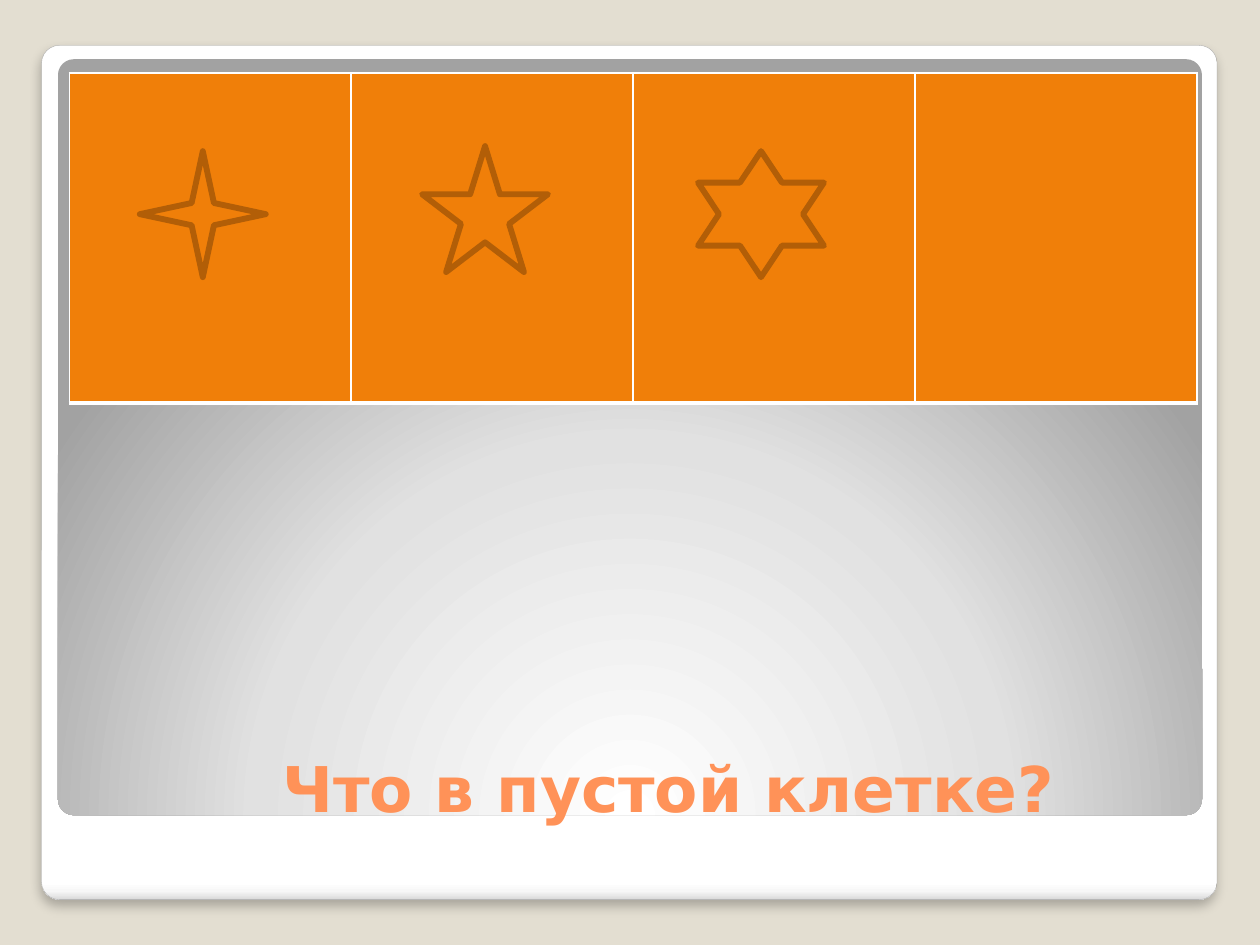
"""Build a puzzle slide: a row of stars with one cell left empty."""
from dataclasses import dataclass

from lxml import etree
from pptx import Presentation
from pptx import util as u
from pptx.dml.color import RGBColor
from pptx.enum import shapes, text
from pptx.oxml import ns

KIND = shapes.MSO_SHAPE


@dataclass(frozen=True)
class Theme:
    """Colours, type and line sizes of the slide."""
    backdrop: str = "E3DED1"
    frame_edge: str = "A4A4A4"
    cell: str = "F07F09"
    star_edge: str = "B25E07"
    border: str = "FFFFFF"
    title: str = "FF9258"
    shadow: str = "000000"
    frame_stops: tuple = ((0, "FFFFFF"), (98, "FFFFFF"), (99, "F7F7F7"), (100, "DADADA"))
    panel_stops: tuple = ((0, "FFFFFF"), (55, "E1E1E1"), (100, "A2A2A2"))
    font: str = "DejaVu Sans"
    title_size: float = 36
    star_line: float = 3.35
    frame_line: float = 0.16


def add_node(parent, tag, **values):
    """Append a DrawingML element and return it."""
    node = etree.SubElement(parent, ns.qn("a:" + tag))
    for name, value in values.items():
        node.set(name, str(value))
    return node


def add_color(parent, color, **changes):
    """Append an RGB colour with optional changes such as alpha."""
    node = add_node(parent, "srgbClr", val=color)
    for name, value in changes.items():
        add_node(node, name, val=value)


def apply_format(target, values):
    """Set each named attribute on the target."""
    for name, value in values.items():
        setattr(target, name, value)


class SlideBuilder:
    """Hold the theme and the current page, measured on a 100 by 75 grid."""

    def __init__(self, theme, columns=100, rows=75):
        self.theme = theme
        self.deck = Presentation()
        apply_format(self.deck, {"slide_width": u.Inches(10), "slide_height": u.Inches(7.5)})
        self.column = self.deck.slide_width / columns
        self.row = self.deck.slide_height / rows
        self.page = self.deck.slides.add_slide(self.deck.slide_layouts[5])
        fill = self.page.background.fill
        fill.solid()
        fill.fore_color.rgb = RGBColor.from_string(theme.backdrop)

    def place(self, left, top, width, height):
        """Turn grid units into slide lengths."""
        return (round(left * self.column), round(top * self.row),
                round(width * self.column), round(height * self.row))

    def shape(self, kind, area, fill=None, edge=None, weight=0):
        """Add a preset shape with a plain fill and outline."""
        item = self.page.shapes.add_shape(kind, *self.place(*area))
        item.shadow.inherit = False
        if fill:
            item.fill.solid()
            item.fill.fore_color.rgb = RGBColor.from_string(fill)
        if edge:
            item.line.color.rgb = RGBColor.from_string(edge)
            item.line.width = u.Pt(weight)
        else:
            item.line.fill.background()
        return item

    def panel(self, area, stops, focus=None, edge=None, shadow=False):
        """Add a rounded panel with a linear or, given a focus, radial gradient."""
        item = self.shape(KIND.ROUNDED_RECTANGLE, area, edge=edge, weight=self.theme.frame_line)
        item.adjustments[0] = 0.021
        properties = item.element.spPr
        gradient = add_node(properties, "gradFill", rotWithShape=1)
        properties.find(ns.qn("a:prstGeom")).addnext(gradient)
        stop_list = add_node(gradient, "gsLst")
        for position, color in stops:
            add_color(add_node(stop_list, "gs", pos=position * 1000), color)
        if focus:
            route = add_node(gradient, "path", path="circle")
            add_node(route, "fillToRect", **{side: share * 1000 for side, share in focus.items()})
        else:
            add_node(gradient, "lin", ang=90 * 60000, scaled=0)
        if shadow:
            effects = properties.find(ns.qn("a:effectLst"))
            cast = add_node(effects, "outerShdw", blurRad=u.Pt(6), dist=u.Pt(4),
                            dir=90 * 60000, algn="t", rotWithShape=0)
            add_color(cast, self.theme.shadow, alpha=25000)

    def title(self, words, area, indent):
        """Move, fill and format the title placeholder."""
        box = self.page.shapes.title
        apply_format(box, dict(zip(("left", "top", "width", "height"), self.place(*area))))
        self.page.shapes.element.append(box.element)
        frame = box.text_frame
        apply_format(frame, {
            "word_wrap": True, "auto_size": text.MSO_AUTO_SIZE.NONE,
            "vertical_anchor": text.MSO_ANCHOR.BOTTOM,
            "margin_left": round(indent * self.column), "margin_bottom": u.Inches(0.05)})
        para = frame.paragraphs[0]
        para.alignment = text.PP_ALIGN.LEFT
        span = para.add_run()
        span.text = words
        apply_format(span.font, {"name": self.theme.font, "bold": True,
                                 "size": u.Pt(self.theme.title_size)})
        span.font.color.rgb = RGBColor.from_string(self.theme.title)

    def table(self, area, columns):
        """Add a one-row table of empty, bordered cells."""
        grid = self.page.shapes.add_table(1, columns, *self.place(*area)).table
        for cell in grid.iter_cells():
            properties = cell._tc.get_or_add_tcPr()
            for side, weight in {"L": 1, "R": 1, "T": 1, "B": 3}.items():
                line = add_node(properties, "ln" + side, w=u.Pt(weight))
                add_color(add_node(line, "solidFill"), self.theme.border)
            cell.fill.solid()
            cell.fill.fore_color.rgb = RGBColor.from_string(self.theme.cell)

    def star(self, kind, left, top):
        """Add a star ten columns wide."""
        self.shape(kind, (left, top, 10, 10), self.theme.cell,
                   self.theme.star_edge, self.theme.star_line)


def main():
    """Build and save the slide."""
    theme = Theme()
    builder = SlideBuilder(theme)
    builder.panel((3.3, 3.6, 93.3, 67.8), theme.frame_stops, edge=theme.frame_edge, shadow=True)
    builder.panel((4.6, 4.7, 90.8, 60), theme.panel_stops,
                  focus={"l": 50, "t": 175, "r": 50, "b": -75})
    builder.title("Что в пустой клетке?", (5.5, 54.5, 89.5, 11.5), indent=16.9)
    builder.table((5.5, 5.8, 89.5, 26.2), columns=4)
    for kind, left, top in ((KIND.STAR_4_POINT, 11.1, 12), (KIND.STAR_5_POINT, 33.5, 11.6),
                            (KIND.STAR_6_POINT, 55.4, 12)):
        builder.star(kind, left, top)
    builder.deck.save("out.pptx")


if __name__ == "__main__":
    main()
